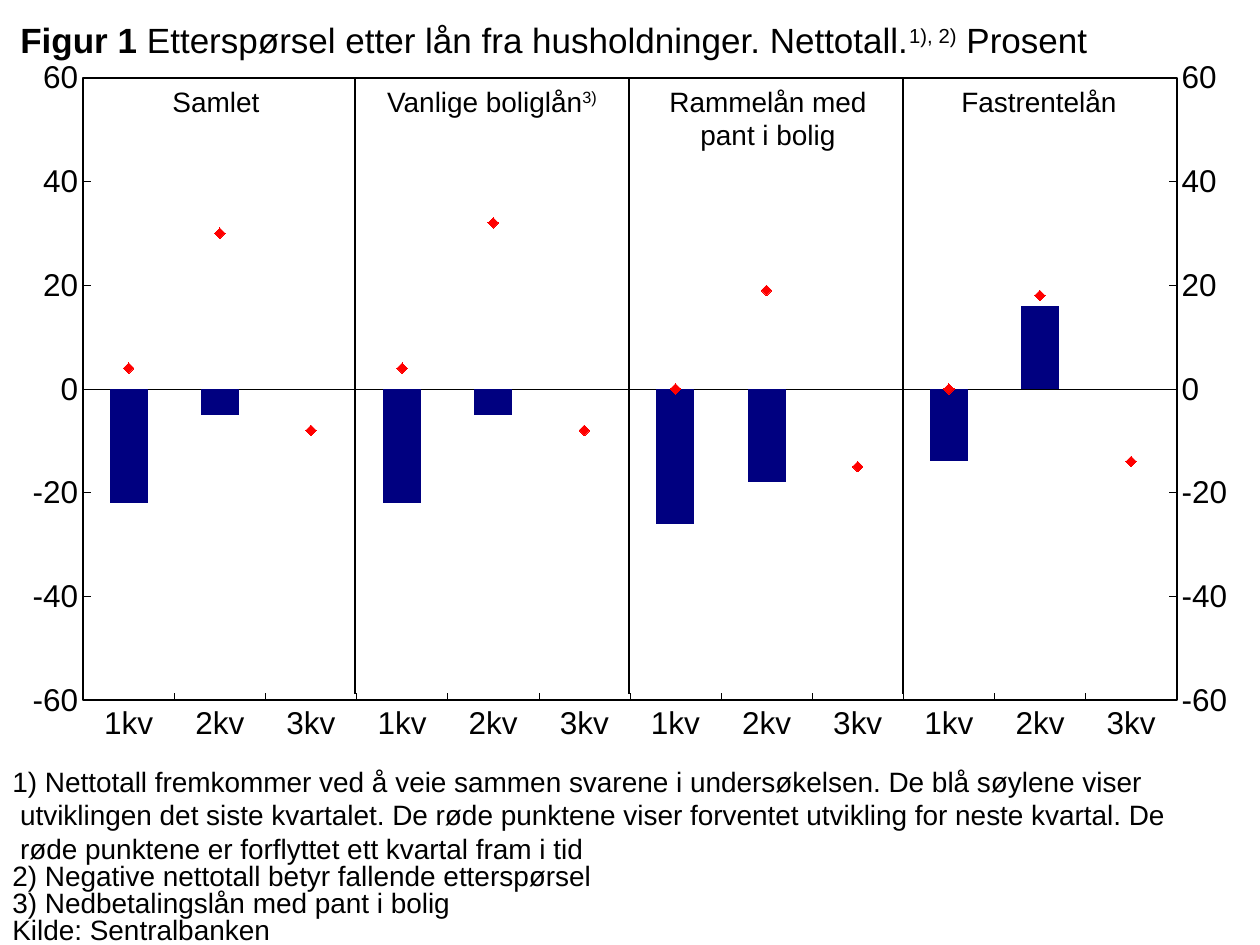
import copy
from lxml import etree
from pptx import Presentation
from pptx import util as u
from pptx.chart.data import CategoryChartData
from pptx.dml.color import RGBColor
from pptx.enum import chart as ch, shapes, text
from pptx.oxml import parse_xml
from pptx.oxml.ns import nsdecls, qn

FONT, BLACK, NAVY, RED = "Arial", "000000", "000080", "FF0000"
QUARTERS = ["1kv", "2kv", "3kv"]
PANELS = [
    ([("Samlet",)], [-22, -5, None], [4, 30, -8]),
    ([("Vanlige boliglån",), ("3)", "sup")], [-22, -5, None], [4, 32, -8]),
    ([("Rammelån med pant i bolig",)], [-26, -18, None], [0, 19, -15]),
    ([("Fastrentelån",)], [-14, 16, None], [0, 18, -14]),
]
TITLE = [("Figur 1", "bold"),
         (" Etterspørsel etter lån fra husholdninger. Nettotall.",),
         ("1), 2)", "sup"), (" Prosent",)]
NOTES = [
    ("1) Nettotall fremkommer ved å veie sammen svarene i undersøkelsen. De blå søylene viser", 1),
    (" utviklingen det siste kvartalet. De røde punktene viser forventet utvikling for neste kvartal. De", 1),
    (" røde punktene er forflyttet ett kvartal fram i tid", 1),
    ("2) Negative nettotall betyr fallende etterspørsel", 0.8),
    ("3) Nedbetalingslån med pant i bolig", 0.8),
    ("Kilde: Sentralbanken", 0.8),
]
PLOT = dict(x=0.066, y=0.026, w=0.868, h=0.866)
PANEL_LEFT, PANEL_TOP, PANEL_W = 78, 78, 276
DIVIDERS = [355, 629, 903]


def px(v):
    return u.Emu(round(v * 914400 / 126))


def color(h):
    return RGBColor.from_string(h)


def add_text(s, box, paragraphs, size=16, align=text.PP_ALIGN.LEFT,
             anchor=text.MSO_ANCHOR.TOP, indent=0):
    tf = s.shapes.add_textbox(*map(px, box)).text_frame
    tf.word_wrap = True
    tf.vertical_anchor = anchor
    for i, (runs, spacing) in enumerate(paragraphs):
        p = tf.paragraphs[0] if i == 0 else tf.add_paragraph()
        p.alignment = align
        p.line_spacing = spacing
        if indent:
            pPr = p._p.get_or_add_pPr()
            pPr.set("marL", str(px(indent)))
            pPr.set("indent", str(-px(indent)))
        for words, *style in runs:
            r = p.add_run()
            r.text = words
            r.font.name, r.font.size = FONT, u.Pt(size)
            r.font.bold = "bold" in style
            r.font.color.rgb = color(BLACK)
            if "sup" in style:
                r._r.get_or_add_rPr().set("baseline", "30000")


def style_axis(axis, tick):
    axis.major_tick_mark, axis.minor_tick_mark = tick, ch.XL_TICK_MARK.NONE
    axis.has_major_gridlines = False
    axis.format.line.color.rgb = color(BLACK)
    axis.format.line.width = u.Pt(0.25)
    f = axis.tick_labels.font
    f.name, f.size = FONT, u.Pt(18)
    f.color.rgb = color(BLACK)


def put(axis, tag, value):
    axis.find(qn("c:" + tag)).set("val", value)


def add_second_axes(chart):
    area = chart._chartSpace.chart.plotArea
    cat, val = area.find(qn("c:catAx")), area.find(qn("c:valAx"))
    if val.find(qn("c:crossBetween")) is None:
        between = etree.Element(qn("c:crossBetween"), val="between")
        val.find(qn("c:crosses")).addnext(between)
    cat2, val2 = copy.deepcopy(cat), copy.deepcopy(val)
    for axis, own, other, cross in ((cat2, "101", "102", "min"), (val2, "102", "101", "max")):
        put(axis, "axId", own)
        put(axis, "crossAx", other)
        put(axis, "crosses", cross)
    put(val2, "axPos", "r")
    val.addnext(val2)
    val2.addnext(cat2)
    chart.category_axis.major_tick_mark = ch.XL_TICK_MARK.NONE
    chart.category_axis.tick_label_position = ch.XL_TICK_LABEL_POSITION.NONE

    bars = area.find(qn("c:barChart"))
    lines = parse_xml(f'<c:lineChart {nsdecls("c")}><c:grouping val="standard"/>'
                      '<c:varyColors val="0"/><c:marker val="1"/>'
                      '<c:axId val="101"/><c:axId val="102"/></c:lineChart>')
    for ser in bars.findall(qn("c:ser"))[len(PANELS):]:
        invert = ser.find(qn("c:invertIfNegative"))
        if invert is not None:
            ser.remove(invert)
        lines.find(qn("c:marker")).addprevious(ser)
    bars.addnext(lines)


def set_plot_area(chart):
    area = chart._chartSpace.chart.plotArea
    for old in area.findall(qn("c:layout")):
        area.remove(old)
    sizes = "".join(f'<c:{k} val="{v}"/>' for k, v in PLOT.items())
    area.insert(0, parse_xml(
        f'<c:layout {nsdecls("c")}><c:manualLayout><c:layoutTarget val="inner"/>'
        f'<c:xMode val="edge"/><c:yMode val="edge"/>{sizes}</c:manualLayout></c:layout>'))
    area.append(parse_xml(
        f'<c:spPr {nsdecls("c", "a")}><a:noFill/><a:ln w="12700"><a:solidFill>'
        f'<a:srgbClr val="{BLACK}"/></a:solidFill></a:ln></c:spPr>'))


def add_demand_chart(s):
    n = len(PANELS)
    data = CategoryChartData()
    data.categories = QUARTERS * n
    for kind in (1, 2):
        for i, panel in enumerate(PANELS):
            values = [None] * 3 * i + panel[kind] + [None] * 3 * (n - 1 - i)
            data.add_series(f"Series {(kind - 1) * n + i + 1}", values)
    chart = s.shapes.add_chart(ch.XL_CHART_TYPE.COLUMN_CLUSTERED,
                               *map(px, (0, 59, 1260, 719)), data).chart
    chart.has_legend = chart.has_title = False
    chart.font.name, chart.font.size = "Arial Narrow", u.Pt(17.9)
    chart.font.color.rgb = color(BLACK)
    axis = chart.value_axis
    axis.minimum_scale, axis.maximum_scale, axis.major_unit = -60, 60, 20
    for a in (axis, chart.category_axis):
        style_axis(a, ch.XL_TICK_MARK.INSIDE)
    add_second_axes(chart)
    set_plot_area(chart)
    bars, points = chart.plots
    bars.gap_width, bars.overlap, bars.vary_by_categories = 140, 100, False
    for ser in bars.series:
        ser.invert_if_negative = False
        ser.format.fill.solid()
        ser.format.fill.fore_color.rgb = color(NAVY)
    for ser in points.series:
        ser.smooth = False
        ser.format.line.fill.background()
        m = ser.marker
        m.style, m.size = ch.XL_MARKER_STYLE.DIAMOND, 6
        m.format.fill.solid()
        m.format.fill.fore_color.rgb = color(RED)
        m.format.line.color.rgb = color(RED)


def add_divider(s, x):
    line = s.shapes.add_connector(shapes.MSO_CONNECTOR.STRAIGHT,
                                  px(x), px(694), px(x), px(PANEL_TOP))
    line.line.color.rgb = color(BLACK)
    line.line.width = u.Pt(0.75)
    etree.SubElement(line._element.spPr, qn("a:effectLst"))


def main():
    prs = Presentation()
    prs.slide_width, prs.slide_height = px(1260), px(945)
    s = prs.slides.add_slide(prs.slide_layouts[6])
    add_demand_chart(s)
    for i, (heading, *_) in enumerate(PANELS):
        width = PANEL_W if i < len(PANELS) - 1 else 266
        add_text(s, (PANEL_LEFT + i * PANEL_W, PANEL_TOP, width, 47), [(heading, 1)],
                 align=text.PP_ALIGN.CENTER)
    for x in DIVIDERS:
        add_divider(s, x)
    add_text(s, (8, 8, 1123, 59), [(TITLE, 1)], size=20, anchor=text.MSO_ANCHOR.BOTTOM)
    add_text(s, (0, 758, 1260, 187), [([(words,)], spacing) for words, spacing in NOTES],
             indent=63)
    prs.save("out.pptx")


if __name__ == "__main__":
    main()
